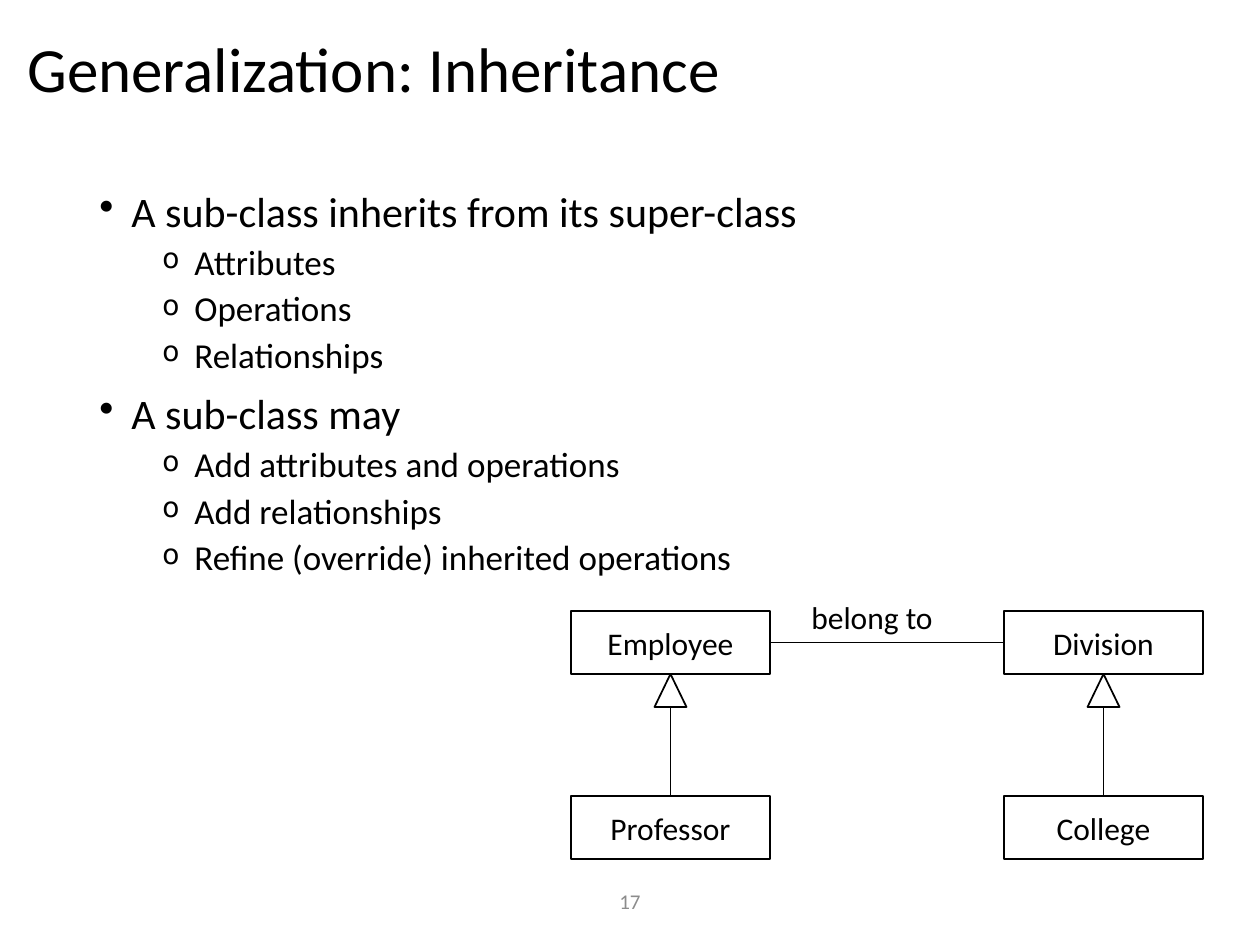
"""Build the slide on inheritance with its class diagram."""
from lxml import etree
from pptx import Presentation
from pptx import util as u
from pptx.dml.color import RGBColor
from pptx.enum import shapes, text
from pptx.oxml.ns import qn

TITLE = "Generalization: Inheritance"
POINTS = [
    ("A sub-class inherits from its super-class",
     ["Attributes", "Operations", "Relationships"]),
    ("A sub-class may",
     ["Add attributes and operations", "Add relationships",
      "Refine (override) inherited operations"]),
]
PAIRS = [("Employee", "Professor"), ("Division", "College")]
LINK = "belong to"
NUMBER = "17"

BLACK = RGBColor(0, 0, 0)
WHITE = RGBColor(255, 255, 255)
GREY = RGBColor(0x8C, 0x8C, 0x8C)
FONT = "Calibri"
LEFT, STEP = 571, 433
WIDE, HIGH = 199, 63
TOP, LOW = 611, 796
TIP_W, TIP_H = 32, 33
# level: size, indent, space before, bullet, bullet percent
LEVELS = [(24, 32, 10, "•", 100), (20, 95, 5, "o", 80)]
HANG = 32


def px(n):
    return u.Emu(round(n * 914400 / 126))


def add_run(par, words, size, color=BLACK):
    run = par.add_run()
    run.text = words
    font = run.font
    font.name, font.size = FONT, u.Pt(size)
    font.color.rgb = color


def add_text(slide, box, wrap=True, anchor=text.MSO_ANCHOR.MIDDLE):
    frame = slide.shapes.add_textbox(*map(px, box)).text_frame
    frame.word_wrap = wrap
    frame.vertical_anchor = anchor
    return frame


def add_point(par, words, level):
    size, indent, gap, mark, scale = LEVELS[level]
    par.level = level
    par.line_spacing = 0.9
    par.space_before = u.Pt(gap)
    props = par._p.get_or_add_pPr()
    props.set("marL", str(px(indent)))
    props.set("indent", str(-px(HANG)))
    etree.SubElement(props, qn("a:buSzPct"), val=str(scale * 1000))
    etree.SubElement(props, qn("a:buChar"), char=mark)
    add_run(par, words, size)


def add_form(slide, kind, box, width, fill=None):
    form = slide.shapes.add_shape(kind, *map(px, box))
    form.shadow.inherit = False
    if fill is None:
        form.fill.background()
    else:
        form.fill.solid()
        form.fill.fore_color.rgb = fill
    form.line.color.rgb = BLACK
    form.line.width = u.Pt(width)
    return form


def add_class(slide, name, x, y):
    form = add_form(slide, shapes.MSO_SHAPE.RECTANGLE, (x, y, WIDE, HIGH), 0.75)
    frame = form.text_frame
    frame.word_wrap = False
    frame.vertical_anchor = text.MSO_ANCHOR.MIDDLE
    par = frame.paragraphs[0]
    par.alignment = text.PP_ALIGN.CENTER
    add_run(par, name, 18)


def add_line(slide, *ends):
    line = slide.shapes.add_connector(
        shapes.MSO_CONNECTOR.STRAIGHT, *map(px, ends))
    line.line.color.rgb = BLACK
    line.line.width = u.Pt(0.5)
    etree.SubElement(line._element.spPr, qn("a:effectLst"))


def main():
    deck = Presentation()
    deck.slide_width, deck.slide_height = px(1260), px(945)
    slide = deck.slides.add_slide(deck.slide_layouts[6])

    par = add_text(slide, (417, 876, 426, 50)).paragraphs[0]
    par.alignment = text.PP_ALIGN.CENTER
    add_run(par, NUMBER, 12, GREY)

    par = add_text(slide, (15, 10, 1230, 125)).paragraphs[0]
    par.line_spacing = 0.9
    add_run(par, TITLE, 36)

    body = add_text(slide, (87, 185, 1086, 667), anchor=text.MSO_ANCHOR.TOP)
    rows = [(words, level) for head, subs in POINTS
            for words, level in [(head, 0)] + [(sub, 1) for sub in subs]]
    for i, (words, level) in enumerate(rows):
        par = body.add_paragraph() if i else body.paragraphs[0]
        add_point(par, words, level)

    for i, (upper, lower) in enumerate(PAIRS):
        x = LEFT + i * STEP
        mid = x + WIDE / 2
        base = TOP + HIGH
        add_class(slide, upper, x, TOP)
        add_class(slide, lower, x, LOW)
        add_form(slide, shapes.MSO_SHAPE.ISOSCELES_TRIANGLE,
                 (mid - TIP_W / 2, base, TIP_W, TIP_H), 1, WHITE)
        add_line(slide, mid, base + TIP_H, mid, LOW)

    add_line(slide, LEFT + WIDE, 642, LEFT + STEP, 642)
    label = add_text(slide, (799, 592, 149, 50), False, text.MSO_ANCHOR.TOP)
    label.auto_size = text.MSO_AUTO_SIZE.SHAPE_TO_FIT_TEXT
    add_run(label.paragraphs[0], LINK, 18)

    deck.save("out.pptx")


if __name__ == "__main__":
    main()
